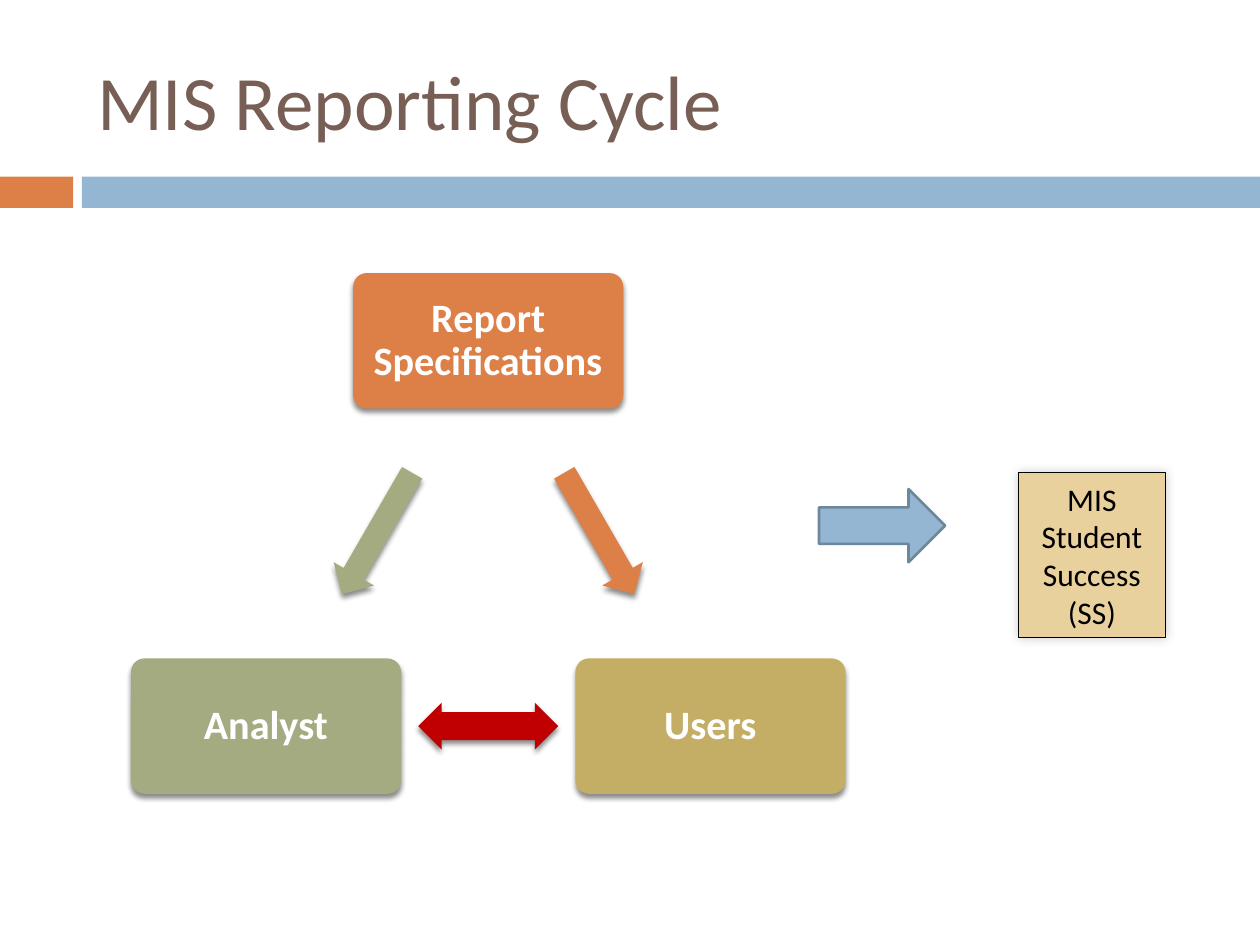
import pptx
import pptx.util
import pptx.dml.color
import pptx.enum.shapes
import pptx.enum.text
import pptx.oxml
import pptx.oxml.ns

Pt = pptx.util.Pt
RGB = pptx.dml.color.RGBColor
Form = pptx.enum.shapes.MSO_SHAPE
Align = pptx.enum.text.PP_ALIGN
Anchor = pptx.enum.text.MSO_ANCHOR

ORANGE = RGB(0xDD, 0x80, 0x47)
BLUE = RGB(0x94, 0xB6, 0xD2)
STEEL = RGB(0x6D, 0x87, 0x9B)
BROWN = RGB(0x77, 0x5F, 0x55)
GOLD = RGB(0xC4, 0xAD, 0x64)
GREEN = RGB(0xA5, 0xAB, 0x81)
RED = RGB(0xC0, 0x00, 0x00)
SAND = RGB(0xE8, 0xD1, 0x9D)
BLACK = RGB(0, 0, 0)
WHITE = RGB(255, 255, 255)


def inner(box, x, y, w, h):
    left, top, width, height = box
    return (int(left + x * width), int(top + y * height),
            int(w * width), int(h * height))


def around(box, x, y, w, h):
    return inner(box, x - w / 2, y - h / 2, w, h)


def write(shape, *lines, size=18, color=BLACK, bold=False,
          align=Align.CENTER, inset=0.1, space=1.0):
    frame = shape.text_frame
    frame.word_wrap = True
    frame.vertical_anchor = Anchor.MIDDLE
    frame.margin_left = frame.margin_right = pptx.util.Inches(inset)
    for i, line in enumerate(lines):
        para = frame.paragraphs[0] if i == 0 else frame.add_paragraph()
        para.alignment = align
        para.line_spacing = space
        run = para.add_run()
        run.text = line
        font = run.font
        font.name, font.size, font.bold = "Calibri", Pt(size), bold
        font.color.rgb = color


def shade(shape, alpha, blur, dist, angle):
    space = pptx.oxml.ns.nsdecls("a")
    effect = pptx.oxml.parse_xml(
        f'<a:effectLst {space}><a:outerShdw blurRad="{Pt(blur)}" '
        f'dist="{Pt(dist)}" dir="{angle * 60000}" rotWithShape="0">'
        f'<a:srgbClr val="000000"><a:alpha val="{alpha * 1000}"/>'
        '</a:srgbClr></a:outerShdw></a:effectLst>')
    props = shape.fill._xPr
    old = props.find(pptx.oxml.ns.qn("a:effectLst"))
    props.replace(old, effect)


def draw(slide, form, box, fill, line=None, width=1, turn=0, adjust=()):
    shape = slide.shapes.add_shape(form, *box)
    shape.shadow.inherit = False
    shape.fill.solid()
    shape.fill.fore_color.rgb = fill
    if line is None:
        shape.line.fill.background()
    else:
        shape.line.color.rgb = line
        shape.line.width = Pt(width)
    shape.rotation = turn
    for i, value in enumerate(adjust):
        shape.adjustments[i] = value
    return shape


def header(slide, box):
    draw(slide, Form.RECTANGLE, inner(box, 0, 0.85, 0.058, 0.15), ORANGE)
    draw(slide, Form.RECTANGLE, inner(box, 0.065, 0.85, 0.935, 0.15), BLUE)
    title = slide.shapes.title
    title.left, title.top, title.width, title.height = inner(
        box, 0.067, 0.15, 0.892, 0.655)
    write(title, "MIS Reporting Cycle", size=44, color=BROWN,
          align=Align.LEFT)


def cycle(slide, box):
    wide, high = 0.378, 0.26
    top = (0.5, high / 2)
    left = (wide / 2, 1 - high / 2)
    right = (1 - wide / 2, 1 - high / 2)
    cards = [("Report Specifications", top, ORANGE),
             ("Users", right, GOLD),
             ("Analyst", left, GREEN)]
    links = [(top, right, Form.RIGHT_ARROW, 60, ORANGE, ()),
             (right, left, Form.LEFT_RIGHT_ARROW, 180, RED, (0.6, 0.5)),
             (left, top, Form.LEFT_ARROW, 300, GREEN, ())]
    for name, spot, fill in cards:
        card = draw(slide, Form.ROUNDED_RECTANGLE,
                    around(box, *spot, wide, high), fill, adjust=(0.1,))
        shade(card, 45, 3, 2.4, 90)
        write(card, name, size=23, color=WHITE, bold=True,
              inset=0.13, space=0.9)
    for start, end, form, turn, fill, adjust in links:
        x, y = [(a + b) / 2 for a, b in zip(start, end)]
        arrow = draw(slide, form, around(box, x, y, 0.196, 0.09), fill,
                     turn=turn, adjust=adjust)
        shade(arrow, 45, 3, 2.4, 90)


def result(slide, box):
    draw(slide, Form.RIGHT_ARROW, inner(box, 0, 0.1, 0.364, 0.443), BLUE,
         line=STEEL, width=1.5)
    note = draw(slide, Form.RECTANGLE, inner(box, 0.575, 0, 0.425, 1), SAND,
                line=BLACK, width=0.75)
    shade(note, 20, 6, 0, 315)
    write(note, "MIS Student", "Success", "(SS)")


def main():
    deck = pptx.Presentation()
    deck.slide_width = pptx.util.Inches(10)
    deck.slide_height = pptx.util.Inches(7.5)
    slide = deck.slides.add_slide(deck.slide_layouts[5])
    page = (0, 0, deck.slide_width, deck.slide_height)
    header(slide, inner(page, 0, 0, 1, 0.22))
    cycle(slide, inner(page, 0.104, 0.289, 0.567, 0.551))
    result(slide, inner(page, 0.65, 0.5, 0.275, 0.175))
    deck.save("out.pptx")


if __name__ == "__main__":
    main()
